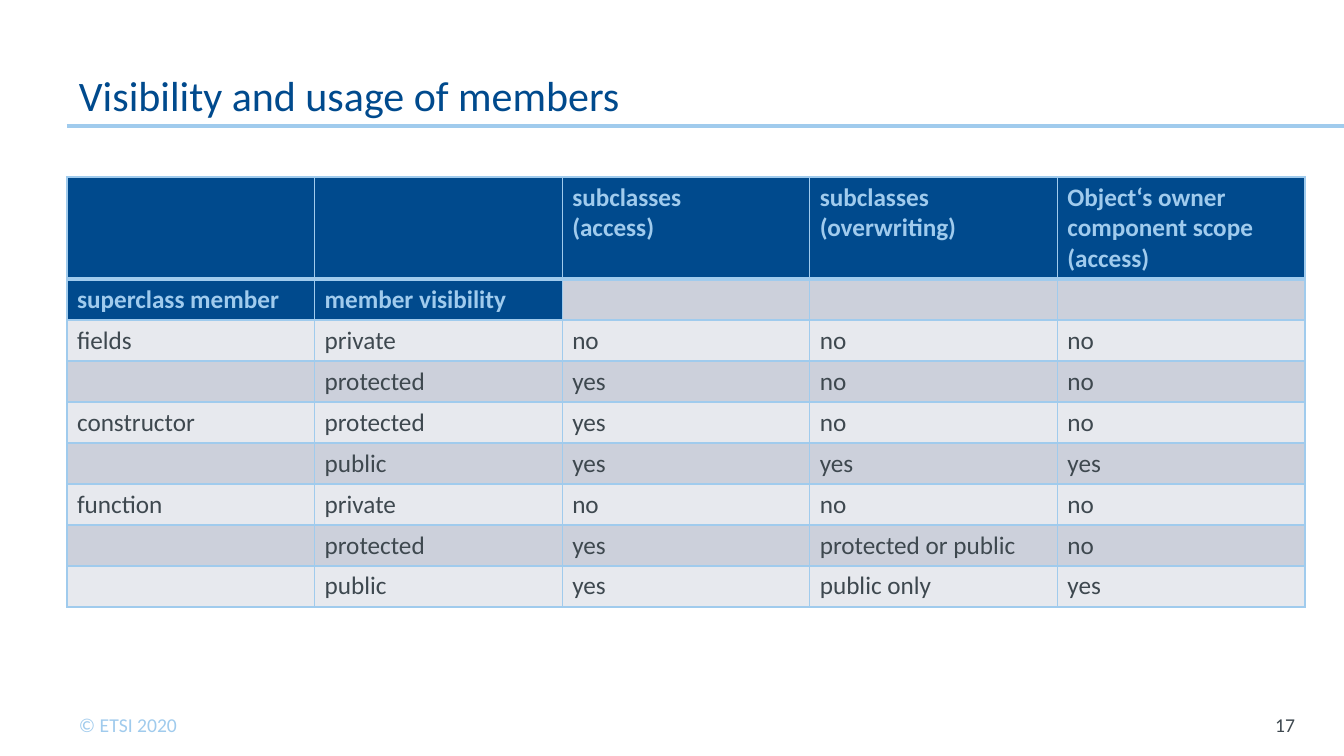
from lxml import etree
from pptx import Presentation
from pptx import util as u
from pptx.dml.color import RGBColor
from pptx.enum import shapes, text
from pptx.oxml.ns import qn

# Content
TITLE = "Visibility and usage of members"
COPYRIGHT = "© ETSI 2020"
PAGE = "17"
MEMBER_RULES = [
    ("", "", "subclasses\v(access)", "subclasses\v(overwriting)",
     "Object‘s owner component scope (access)"),
    ("superclass member", "member visibility", "", "", ""),
    ("fields", "private", "no", "no", "no"),
    ("", "protected", "yes", "no", "no"),
    ("constructor", "protected", "yes", "no", "no"),
    ("", "public", "yes", "yes", "yes"),
    ("function", "private", "no", "no", "no"),
    ("", "protected", "yes", "protected or public", "no"),
    ("", "public", "yes", "public only", "yes"),
]

# Theme and layout, lengths in px
THEME = {
    "font": "Calibri",
    "navy": "004A8D", "sky": "A0CBED", "ink": "3E484F",
    "bands": ("E7E9EE", "CCD0DB"),
    "title": 30, "body": 18, "footer": 14,
    "rule": 2.25, "grid": 1, "header_rule": 3,
}
SLIDE_W, SLIDE_H = 1344, 756
LEFT, RULE_Y = 67, 126
TABLE_TOP, TABLE_W = 177, 1238
HEADER_H, ROW_H = 102, 41


def px(length):
    return u.Emu(round(length * 914400 / 100.8))


def style(paragraph, size, color, bold=False):
    font_format = {"name": THEME["font"], "size": u.Pt(size), "bold": bold}
    for run in paragraph.runs:
        for key, value in font_format.items():
            setattr(run.font, key, value)
        run.font.color.rgb = RGBColor.from_string(THEME[color])


def add_label(slide, words, box, size, color, frame_format, paragraph_format):
    frame = slide.shapes.add_textbox(*map(px, box)).text_frame
    for key, value in frame_format.items():
        setattr(frame, key, value)
    line = frame.paragraphs[0]
    line.text = words
    for key, value in paragraph_format.items():
        setattr(line, key, value)
    style(line, size, color)


def set_borders(cell, widths):
    properties = cell._tc.get_or_add_tcPr()
    for index, (side, width) in enumerate(widths.items()):
        border = etree.Element(qn(f"a:ln{side}"), w=str(u.Pt(width)))
        fill = etree.SubElement(border, qn("a:solidFill"))
        etree.SubElement(fill, qn("a:srgbClr"), val=THEME["sky"])
        properties.insert(index, border)


def add_member_table(slide):
    row_count, column_count = len(MEMBER_RULES), len(MEMBER_RULES[0])
    height = HEADER_H + ROW_H * (row_count - 1)
    table = slide.shapes.add_table(
        row_count, column_count, px(LEFT), px(TABLE_TOP), px(TABLE_W), px(height)).table
    for column in table.columns:
        column.width = px(TABLE_W / column_count)
    for r, rule in enumerate(MEMBER_RULES):
        table.rows[r].height = px(ROW_H if r else HEADER_H)
        for c, words in enumerate(rule):
            cell = table.cell(r, c)
            heading = r == 0 or (r == 1 and c < 2)
            cell.fill.solid()
            cell.fill.fore_color.rgb = RGBColor.from_string(
                THEME["navy"] if heading else THEME["bands"][r % 2])
            grid, thick = THEME["grid"], THEME["header_rule"]
            set_borders(cell, {"L": grid, "R": grid,
                               "T": thick if r == 1 else grid,
                               "B": thick if r == 0 else grid})
            if words:
                cell.text = words
                style(cell.text_frame.paragraphs[0], THEME["body"],
                      "sky" if heading else "ink", heading)


def main():
    deck = Presentation()
    deck.slide_width, deck.slide_height = px(SLIDE_W), px(SLIDE_H)
    slide = deck.slides.add_slide(deck.slide_layouts[6])

    # Rule under the title, running to the slide edge
    rule = slide.shapes.add_connector(
        shapes.MSO_CONNECTOR.STRAIGHT, px(LEFT), px(RULE_Y), px(SLIDE_W), px(RULE_Y))
    rule.line.color.rgb = RGBColor.from_string(THEME["sky"])
    rule.line.width = u.Pt(THEME["rule"])
    etree.SubElement(rule._element.spPr, qn("a:effectLst"))

    # Footer
    add_label(slide, COPYRIGHT, (69, 708, 135, 34), THEME["footer"], "sky",
              {"word_wrap": False}, {})
    add_label(slide, PAGE, (1235, 705, 70, 40), THEME["footer"], "ink",
              {"word_wrap": True, "margin_left": 0,
               "vertical_anchor": text.MSO_ANCHOR.MIDDLE},
              {"alignment": text.PP_ALIGN.RIGHT})

    # Title
    add_label(slide, TITLE, (LEFT, 30, 1050, 96), THEME["title"], "navy",
              {"word_wrap": True, "vertical_anchor": text.MSO_ANCHOR.BOTTOM,
               "margin_left": px(12), "margin_right": px(12),
               "margin_top": px(6), "margin_bottom": px(6)},
              {"line_spacing": u.Pt(THEME["title"])})

    # Visibility table
    add_member_table(slide)
    deck.save("out.pptx")


if __name__ == "__main__":
    main()
